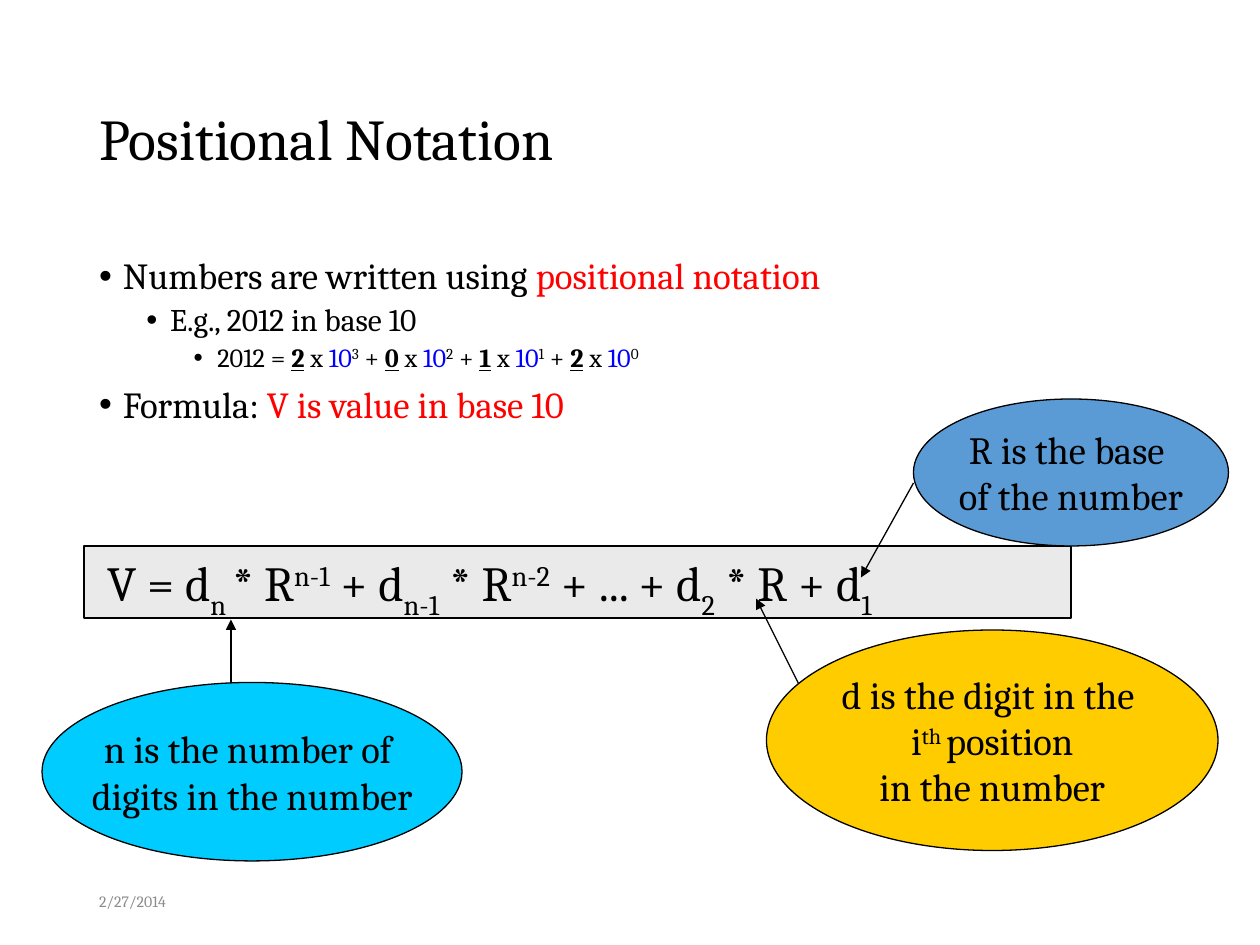
from lxml.etree import SubElement
from pptx import Presentation
from pptx.dml.color import RGBColor
from pptx.enum.shapes import MSO_CONNECTOR, MSO_SHAPE
from pptx.enum.text import MSO_ANCHOR, MSO_AUTO_SIZE, PP_ALIGN
from pptx.oxml.ns import qn
from pptx.util import Pt

FONT = "Cambria"
COLORS = {
    "black": "000000", "red": "FF0000", "blue": "0000FF", "date": "8C8C8C",
    "formula": "EAEAEA", "base": "5B9BD5", "count": "00CCFF", "digit": "FFCC00",
}
RAISED = {"up": 30000, "down": -30000}
LEVELS = [(21, 13.5, 7.5), (18, 40.5, 3.8), (15, 67.5, 3.8)]
HANGING = 13.5


def color(name):
    """Return the palette colour called name."""
    return RGBColor.from_string(COLORS[name])


def add_spans(para, spans, size, ink="black"):
    """Add (text, style) runs, where style is a colour, a shift or 'place'."""
    for text, style in spans:
        span = para.add_run()
        span.text = text
        font = span.font
        font.name, font.size = FONT, Pt(size)
        font.color.rgb = color(style if style in COLORS else ink)
        if style == "place":
            font.bold = font.underline = True
        if style in RAISED:
            font._element.set("baseline", str(RAISED[style]))


def place(shape, box):
    """Move a shape to box, given as left, top, width and height."""
    shape.left, shape.top, shape.width, shape.height = map(Pt, box)


def fill_title(page, box, text):
    """Place and format the title."""
    title = page.shapes.title
    place(title, box)
    title.text_frame.vertical_anchor = MSO_ANCHOR.MIDDLE
    para = title.text_frame.paragraphs[0]
    para.alignment = PP_ALIGN.LEFT
    para.line_spacing = 0.9
    add_spans(para, [(text, "")], 33)


def fill_body(page, box, items):
    """Place the body and fill it with (level, spans) bullets."""
    body = page.placeholders[1]
    place(body, box)
    frame = body.text_frame
    frame.auto_size = MSO_AUTO_SIZE.NONE
    for index, (level, spans) in enumerate(items):
        para = frame.add_paragraph() if index else frame.paragraphs[0]
        size, margin, before = LEVELS[level]
        para.level = level
        para.line_spacing = 0.9
        para.space_before = Pt(before)
        props = para._p.get_or_add_pPr()
        props.set("marL", str(Pt(margin)))
        props.set("indent", str(-Pt(HANGING)))
        SubElement(props, qn("a:buFont"), typeface="Arial")
        SubElement(props, qn("a:buChar"), char="•")
        add_spans(para, spans, size)


def add_date(page, box, text):
    """Add the grey date."""
    frame = page.shapes.add_textbox(*map(Pt, box)).text_frame
    frame.word_wrap = True
    frame.vertical_anchor = MSO_ANCHOR.MIDDLE
    add_spans(frame.paragraphs[0], [(text, "")], 9, "date")


def add_outlined(page, kind, box, fill):
    """Add a filled shape with a thin black outline and return it."""
    shape = page.shapes.add_shape(kind, *map(Pt, box))
    shape.shadow.inherit = False
    shape.fill.solid()
    shape.fill.fore_color.rgb = color(fill)
    shape.line.color.rgb = color("black")
    shape.line.width = Pt(0.75)
    return shape


def add_formula(page, box, spans):
    """Add the formula bar."""
    frame = add_outlined(page, MSO_SHAPE.RECTANGLE, box, "formula").text_frame
    frame.word_wrap = True
    frame.vertical_anchor = MSO_ANCHOR.TOP
    frame.paragraphs[0].alignment = PP_ALIGN.LEFT
    add_spans(frame.paragraphs[0], spans, 28)


def add_callout(page, box, fill, lines):
    """Add an ellipse with centred lines of text."""
    frame = add_outlined(page, MSO_SHAPE.OVAL, box, fill).text_frame
    frame.word_wrap = False
    frame.vertical_anchor = MSO_ANCHOR.MIDDLE
    for index, spans in enumerate(lines):
        para = frame.add_paragraph() if index else frame.paragraphs[0]
        para.alignment = PP_ALIGN.CENTER
        add_spans(para, spans, 22)


def add_arrow(page, start, end):
    """Add a thin arrow from start to end."""
    arrow = page.shapes.add_connector(
        MSO_CONNECTOR.STRAIGHT, *map(Pt, (*start, *end)))
    arrow.line.color.rgb = color("black")
    arrow.line.width = Pt(0.75)
    SubElement(arrow.line._get_or_add_ln(), qn("a:tailEnd"), type="triangle")
    SubElement(arrow._element.spPr, qn("a:effectLst"))


def expansion(digits):
    """Return the spans that write digits out as powers of ten."""
    spans = [(f"{digits} = ", "")]
    for index, digit in enumerate(digits):
        if index:
            spans.append((" + ", ""))
        power = str(len(digits) - 1 - index)
        spans += [(digit, "place"), (" x ", ""), ("10", "blue"), (power, "up")]
    return spans


def build_page(page):
    """Lay out the positional notation slide."""
    fill_title(page, (49.5, 28.75, 621, 104.4), "Positional Notation")
    fill_body(page, (49.5, 143.75, 621, 342.7), [
        (0, [("Numbers are written using ", ""), ("positional notation", "red")]),
        (1, [("E.g., 2012 in base 10", "")]),
        (2, expansion("2012")),
        (0, [("Formula: ", ""), ("V is value in base 10", "red")]),
    ])
    add_date(page, (49.5, 500.5, 162, 28.75), "2/27/2014")
    add_formula(page, (48, 312, 564, 41.2), [
        ("\u00a0V = d", ""), ("n ", "down"), ("* R", ""), ("n-1", "up"),
        (" + d", ""), ("n-1", "down"), (" * R", ""), ("n-2", "up"),
        (" + ... + d", ""), ("2", "down"), (" * R + d", ""), ("1", "down"),
    ])
    add_callout(page, (522, 228, 180, 84), "base",
                [[("R is the base ", "")], [("of the number", "")]])
    for start, end in [((132, 396), (132, 354)), ((462, 402), (432, 342)),
                       ((522, 276), (492, 330))]:
        add_arrow(page, start, end)
    add_callout(page, (24, 390, 240, 102), "count",
                [[("n is the number of ", "")], [("digits in the number", "")]])
    add_callout(page, (438, 360, 258, 126), "digit", [
        [("d is the digit in the ", "")],
        [(" i", ""), ("th ", "up"), ("position ", "")],
        [("in the number", "")],
    ])


def main():
    """Build and save the deck."""
    deck = Presentation()
    deck.slide_width, deck.slide_height = Pt(720), Pt(540)
    build_page(deck.slides.add_slide(deck.slide_layouts[1]))
    deck.save("out.pptx")


if __name__ == "__main__":
    main()
